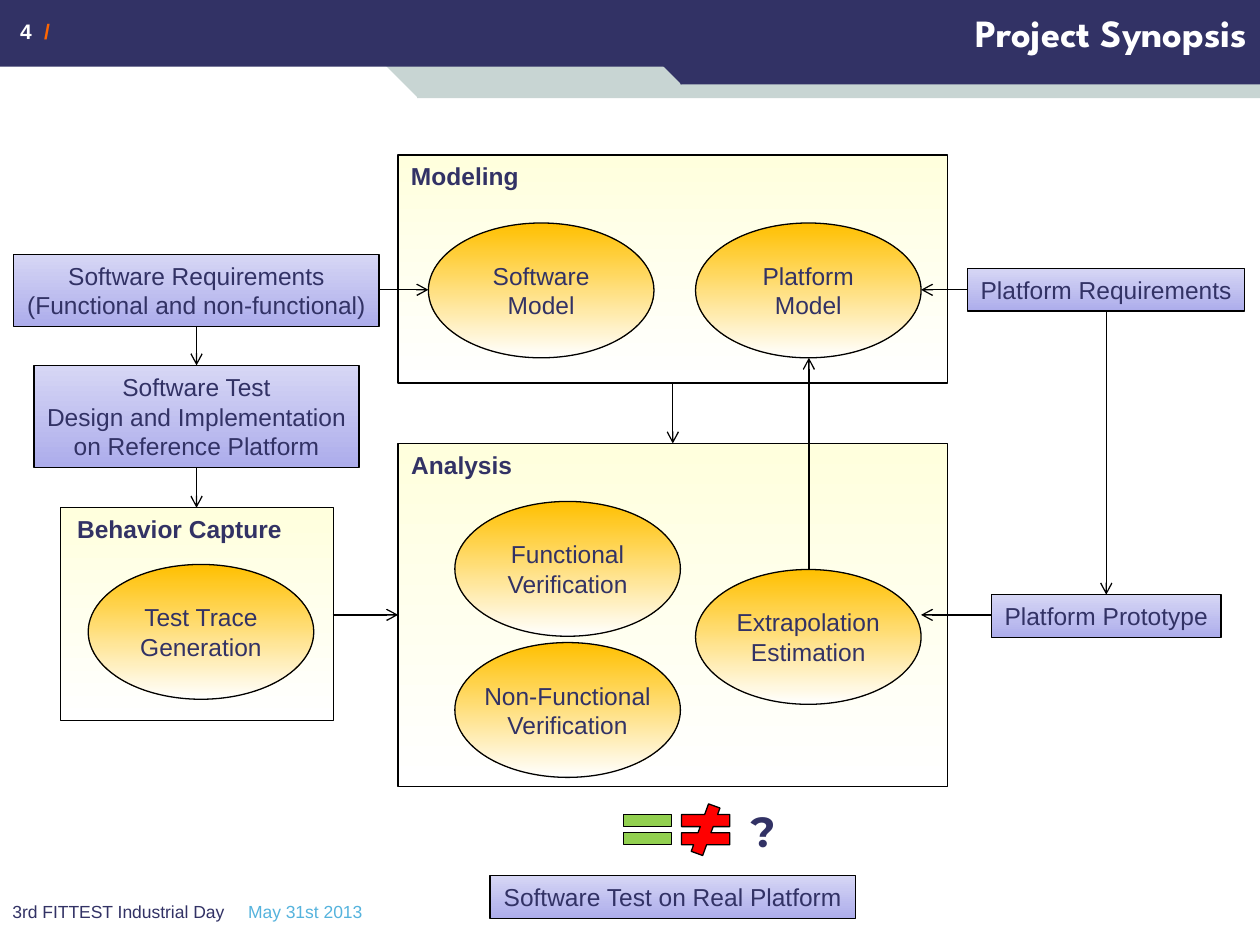
from lxml.etree import SubElement
from pptx import Presentation
from pptx.dml.color import RGBColor
from pptx.enum.shapes import MSO_CONNECTOR, MSO_SHAPE
from pptx.enum.text import MSO_ANCHOR, MSO_AUTO_SIZE, PP_ALIGN
from pptx.oxml.ns import qn
from pptx.util import Inches, Pt

HUES = {
    "navy": "323265", "mist": "C8D5D3", "white": "FFFFFF", "black": "000000",
    "orange": "FF6600", "sky": "55B3DD", "green": "92D050", "red": "FF0000",
}
FADES = {
    "box": ("D6D6F5", "ADADEB"),
    "panel": ("FFFFDD", "FFFFFF"),
    "oval": ("FFC000", "FFFFFF"),
}
OVAL = (1.79, 1.07)
BAND = [
    (MSO_SHAPE.RIGHT_TRIANGLE, (2.98, 0.44, 0.33, 0.33), "mist", 180),
    (MSO_SHAPE.RECTANGLE, (3.31, 0.51, 6.69, 0.27), "mist", 0),
    (MSO_SHAPE.RECTANGLE, (0, 0, 10, 0.53), "navy", 0),
    (MSO_SHAPE.RIGHT_TRIANGLE, (5.13, 0.39, 0.28, 0.28), "navy", 180),
    (MSO_SHAPE.RECTANGLE, (5.4, 0.41, 4.6, 0.26), "navy", 0),
]
BOXES = [
    ((0.11, 2.02, 2.9, 0.57), ["Software Requirements", "(Functional and non-functional)"]),
    ((7.68, 2.13, 2.2, 0.34), ["Platform Requirements"]),
    ((0.27, 2.9, 2.58, 0.81),
     ["Software Test", "Design and Implementation", "on Reference Platform"]),
    ((3.89, 6.95, 2.9, 0.34), ["Software Test on Real Platform"]),
    ((7.87, 4.72, 1.82, 0.34), ["Platform Prototype"]),
]
PANELS = [
    ("Modeling", (3.16, 1.23, 4.36, 1.81), (3.16, 1.06), [
        ((3.4, 1.77), ["Software", "Model"]),
        ((5.52, 1.77), ["Platform", "Model"])]),
    ("Analysis", (3.16, 3.52, 4.36, 2.72), (3.16, 1.01), [
        ((3.61, 3.98), ["Functional", "Verification"]),
        ((3.61, 5.1), ["Non-Functional", "Verification"]),
        ((5.52, 4.52), ["Extrapolation", "Estimation"])]),
    ("Behavior Capture", (0.48, 4.03, 2.17, 1.69), (0.51, 1.83), [
        ((0.7, 4.48), ["Test Trace", "Generation"])]),
]
ARROWS = [
    (1.56, 2.59, 1.56, 2.9), (1.56, 3.71, 1.56, 4.03),
    (3.01, 2.3, 3.4, 2.3), (7.68, 2.3, 7.31, 2.3),
    (2.64, 4.88, 3.16, 4.88), (5.34, 3.04, 5.34, 3.52),
    (6.42, 4.52, 6.42, 2.84), (8.78, 2.47, 8.78, 4.72),
    (7.87, 4.88, 7.31, 4.88),
]
SIGNS = [
    (MSO_SHAPE.MATH_EQUAL, (4.88, 6.38, 0.52, 0.41), "green"),
    (MSO_SHAPE.MATH_NOT_EQUAL, (5.34, 6.38, 0.52, 0.41), "red"),
]


def tint(hue):
    return RGBColor.from_string(HUES.get(hue, hue))


def write(frame, lines, size=14, bold=False, face="Arial", align=PP_ALIGN.CENTER,
          wrap=False, tab=None):
    """Fill a frame with lines, each a list of (text, hue) runs."""
    frame.word_wrap = wrap
    frame.auto_size = MSO_AUTO_SIZE.NONE
    for i, line in enumerate(lines):
        para = frame.paragraphs[0] if i == 0 else frame.add_paragraph()
        para.alignment = align
        if tab:
            tabs = SubElement(para._p.get_or_add_pPr(), qn("a:tabLst"))
            SubElement(tabs, qn("a:tab"), pos=str(Inches(tab)), algn="l")
        for text, hue in line:
            run = para.add_run()
            run.text = text
            run.font.size, run.font.bold, run.font.name = Pt(size), bold, face
            run.font.color.rgb = tint(hue)


def plain(lines):
    return [[(line, "navy")] for line in lines]


def draw(shapes, kind, at, hue=None, fade=None, edge=True):
    shape = shapes.add_shape(kind, *map(Inches, at))
    shape.shadow.inherit = False
    if fade:
        shape.fill.gradient()
        shape.fill.gradient_angle = 270
        for stop, code in zip(shape.fill.gradient_stops, FADES[fade]):
            stop.color.rgb = tint(code)
    else:
        shape.fill.solid()
        shape.fill.fore_color.rgb = tint(hue)
    if edge:
        shape.line.color.rgb = tint("black")
        shape.line.width = Pt(0.75)
    else:
        shape.line.fill.background()
    shape.text_frame.vertical_anchor = MSO_ANCHOR.MIDDLE
    return shape


def label(shapes, at, lines, **style):
    write(shapes.add_textbox(*map(Inches, at)).text_frame, lines, **style)


def arrow(shapes, ends):
    line = shapes.add_connector(MSO_CONNECTOR.STRAIGHT, *map(Inches, ends))
    line.line.color.rgb = tint("black")
    line.line.width = Pt(0.75)
    SubElement(line.line._get_or_add_ln(), qn("a:tailEnd"), type="arrow")
    SubElement(line.element.spPr, qn("a:effectLst"))


def head(slide):
    shapes = slide.shapes
    for kind, at, hue, turn in BAND:
        draw(shapes, kind, at, hue, edge=False).rotation = turn
    page = draw(shapes, MSO_SHAPE.RECTANGLE, (0.16, 0.15, 0.34, 0.2), "navy", edge=False)
    frame = page.text_frame
    frame.margin_left = frame.margin_right = frame.margin_top = frame.margin_bottom = 0
    write(frame, [[("4\t", "white"), ("/", "orange")]], size=12, bold=True,
          align=PP_ALIGN.LEFT, tab=0.19)
    title = shapes.title
    title.left, title.top, title.width, title.height = map(Inches, (0.89, 0.07, 9.11, 0.37))
    title.fill.solid()
    title.fill.fore_color.rgb = tint("navy")
    title.text_frame.margin_top = title.text_frame.margin_bottom = 0
    title.text_frame.vertical_anchor = MSO_ANCHOR.MIDDLE
    write(title.text_frame, [[("Project Synopsis", "white")]], size=22, bold=True,
          face="League Spartan", align=PP_ALIGN.RIGHT, wrap=True)
    title.element.getparent().append(title.element)


def main():
    deck = Presentation()
    deck.slide_width, deck.slide_height = Inches(10), Inches(7.5)
    slide = deck.slides.add_slide(deck.slide_layouts[5])
    shapes = slide.shapes
    head(slide)
    label(shapes, (0, 7.1, 3.01, 0.27),
          [[("3rd FITTEST Industrial Day\t", "navy"), ("May 31st 2013", "sky")]],
          size=10, align=PP_ALIGN.LEFT, wrap=True, tab=1.87)
    for at, lines in BOXES:
        box = draw(shapes, MSO_SHAPE.RECTANGLE, at, fade="box")
        write(box.text_frame, plain(lines))
    for name, at, (left, width), ovals in PANELS:
        draw(shapes, MSO_SHAPE.FLOWCHART_PROCESS, at, fade="panel")
        for spot, lines in ovals:
            oval = draw(shapes, MSO_SHAPE.OVAL, spot + OVAL, fade="oval")
            write(oval.text_frame, plain(lines))
        label(shapes, (left, at[1], width, 0.34), plain([name]), bold=True)
    for ends in ARROWS:
        arrow(shapes, ends)
    for kind, at, hue in SIGNS:
        draw(shapes, kind, at, hue)
    label(shapes, (5.85, 6.34, 0.41, 0.5), plain(["?"]), size=24, bold=True, face="Montserrat")
    deck.save("out.pptx")


if __name__ == "__main__":
    main()
